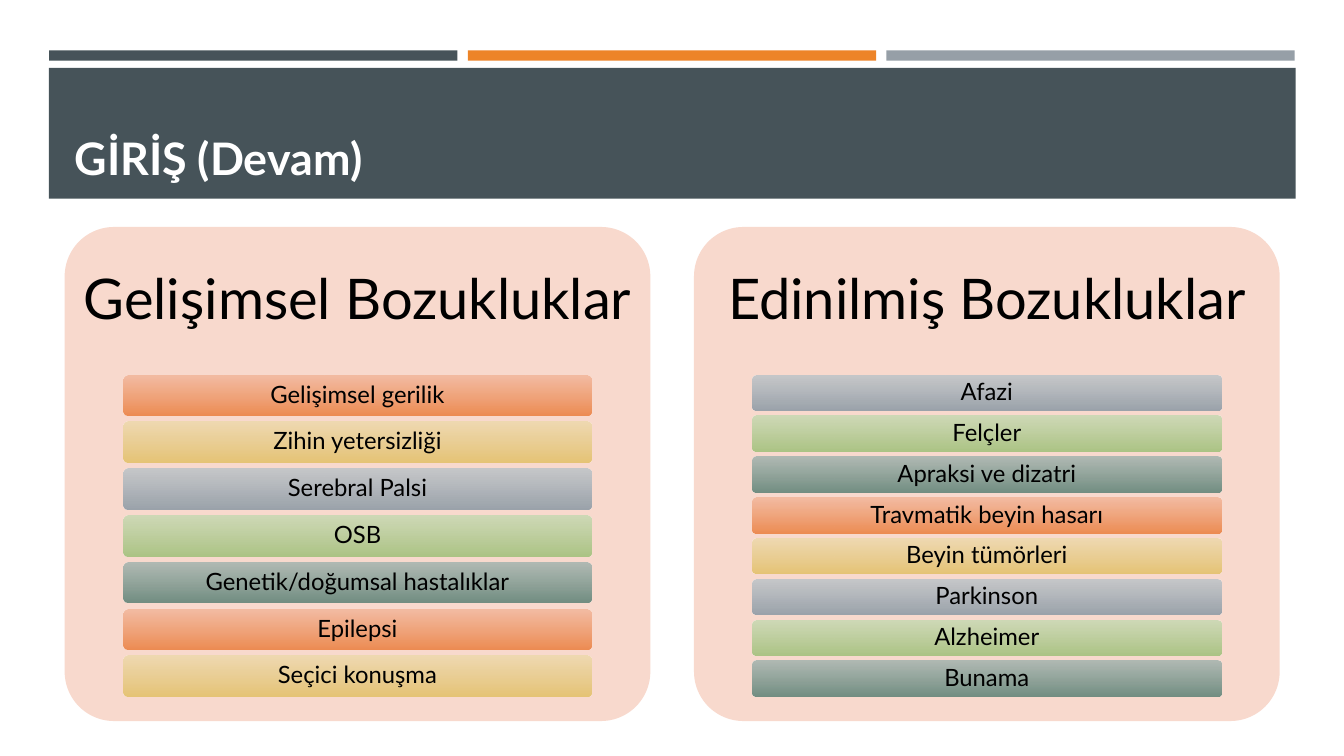
"""Build the slide that compares developmental and acquired disorders."""
import itertools

import lxml.etree
import pptx
import pptx.dml.color
import pptx.enum.shapes
import pptx.enum.text
import pptx.oxml.ns
import pptx.util

Cm = pptx.util.Cm
RGB = pptx.dml.color.RGBColor.from_string
SHAPE = pptx.enum.shapes.MSO_SHAPE
ALIGN = pptx.enum.text.PP_ALIGN
ANCHOR = pptx.enum.text.MSO_ANCHOR

THEME = {
    "font": "Lato",
    "title_size": 32,
    "heading_size": 40,
    "item_size": 17,
    "title_text": "FFFFFF",
    "text": "000000",
    "banner": "465359",
    "stripes": ["465359", "ED8428", "969FA7"],
    "panel": "F8D9CD",
    "gradients": [
        ("F3B89D", "ED8C53"),
        ("EED9AE", "E6C476"),
        ("C0C5C9", "9BA3AB"),
        ("CAD9B4", "ACC485"),
        ("A8B6B0", "728E82"),
    ],
}

COLUMNS = [
    ("Gelişimsel Bozukluklar", [
        "Gelişimsel gerilik", "Zihin yetersizliği", "Serebral Palsi", "OSB",
        "Genetik/doğumsal hastalıklar", "Epilepsi", "Seçici konuşma",
    ]),
    ("Edinilmiş Bozukluklar", [
        "Afazi", "Felçler", "Apraksi ve dizatri", "Travmatik beyin hasarı",
        "Beyin tümörleri", "Parkinson", "Alzheimer", "Bunama",
    ]),
]


def add_block(kind, left, top, width, height, color=None):
    sp = s.shapes.add_shape(kind, Cm(left), Cm(top), Cm(width), Cm(height))
    sp.shadow.inherit = False
    sp.line.fill.background()
    if color:
        sp.fill.solid()
        sp.fill.fore_color.rgb = RGB(color)
    if kind == SHAPE.ROUNDED_RECTANGLE:
        sp.adjustments[0] = 0.1
    return sp


def write(sp, text, size, color, align, anchor, inset_x, inset_y, spacing):
    tf = sp.text_frame
    tf.word_wrap = True
    tf.vertical_anchor = anchor
    tf.margin_left = tf.margin_right = Cm(inset_x)
    tf.margin_top = tf.margin_bottom = Cm(inset_y)
    p = tf.paragraphs[0]
    p.alignment = align
    p.line_spacing = spacing
    p.space_before = pptx.util.Pt(0)
    r = p.add_run()
    r.text = text
    r.font.name = THEME["font"]
    r.font.size = pptx.util.Pt(size)
    r.font.color.rgb = RGB(color)
    return r


prs = pptx.Presentation()
prs.slide_width, prs.slide_height = Cm(33.87), Cm(19.05)
s = prs.slides.add_slide(prs.slide_layouts[5])

for i, color in enumerate(THEME["stripes"]):
    add_block(SHAPE.RECTANGLE, 1.24 + i * 10.55, 1.27, 10.29, 0.26, color)
add_block(SHAPE.RECTANGLE, 1.23, 1.71, 31.42, 3.3, THEME["banner"])

title = s.shapes.title
title.left, title.top, title.width, title.height = Cm(1.63), Cm(1.96), Cm(30.63), Cm(2.82)
r = write(title, "GİRİŞ (Devam)", THEME["title_size"], THEME["title_text"],
          ALIGN.LEFT, ANCHOR.BOTTOM, 0.25, 0.13, 1.0)
r.font.bold = True
s.shapes._spTree.append(title._element)

panel_top, panel_width, panel_height = 5.72, 14.76, 12.45
heading_height = 0.3 * panel_height
list_height = 0.65 * panel_height
gap_ratio = 2 / 13
gradients = itertools.cycle(THEME["gradients"])

for column, (heading, items) in enumerate(COLUMNS):
    left = 1.63 + column * 15.86
    add_block(SHAPE.ROUNDED_RECTANGLE, left, panel_top, panel_width, panel_height, THEME["panel"])
    box = s.shapes.add_textbox(Cm(left), Cm(panel_top), Cm(panel_width), Cm(heading_height))
    write(box, heading, THEME["heading_size"], THEME["text"],
          ALIGN.CENTER, ANCHOR.MIDDLE, 0.43, 0.43, 0.9)

    bar_height = list_height / (len(items) + (len(items) - 1) * gap_ratio)
    for row, item in enumerate(items):
        top = panel_top + heading_height + row * bar_height * (1 + gap_ratio)
        sp = add_block(SHAPE.ROUNDED_RECTANGLE, left + 0.1 * panel_width, top,
                       0.8 * panel_width, bar_height)
        sp.fill.gradient()
        sp.fill.gradient_angle = 270
        for stop, color in zip(sp.fill.gradient_stops, next(gradients)):
            stop.color.rgb = RGB(color)
        first_color = sp._element.spPr.find(".//" + pptx.oxml.ns.qn("a:srgbClr"))
        lxml.etree.SubElement(first_color, pptx.oxml.ns.qn("a:alpha"), val="90000")
        write(sp, item, THEME["item_size"], THEME["text"],
              ALIGN.CENTER, ANCHOR.MIDDLE, 0.13, 0.1, 0.9)

prs.save("out.pptx")
